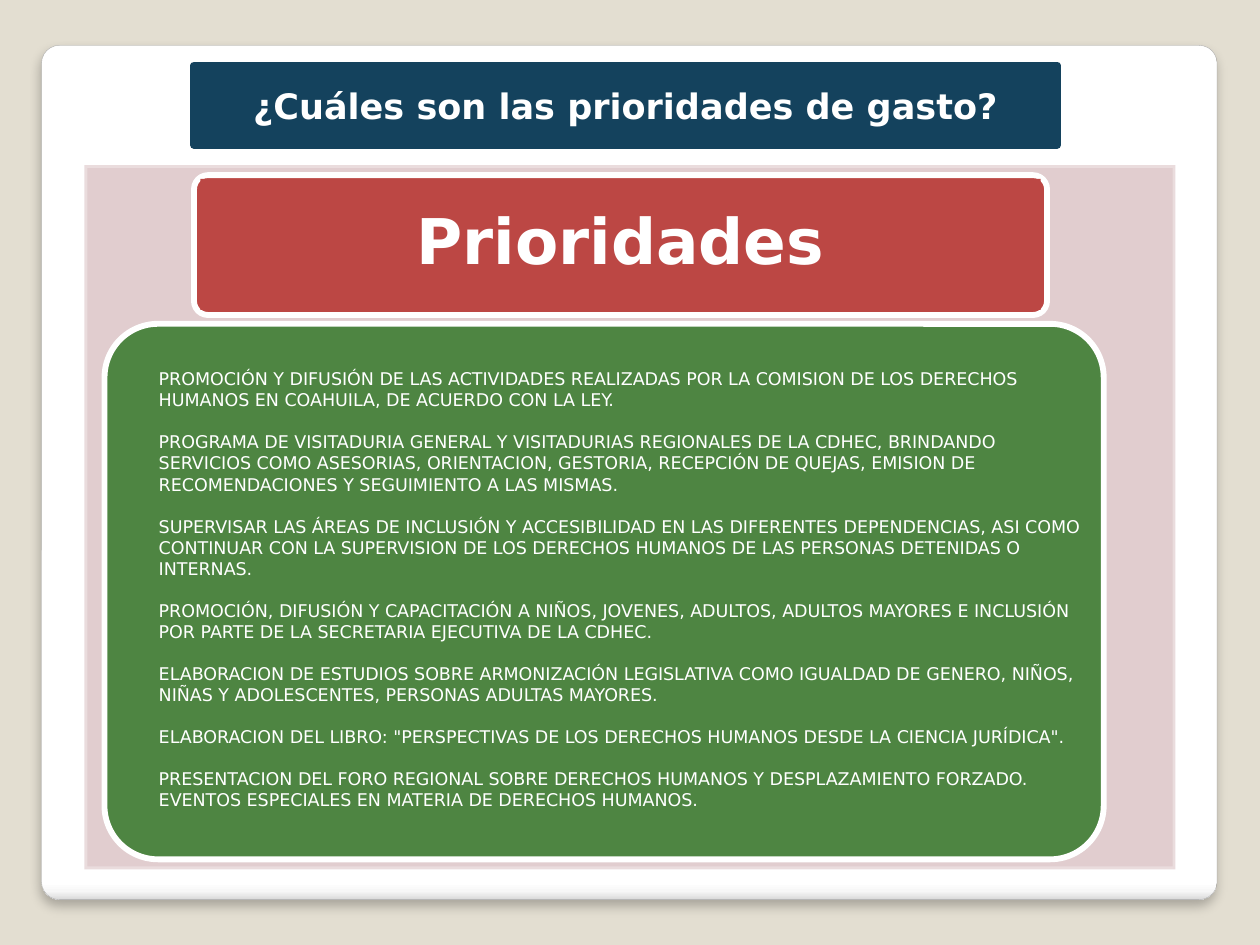
from dataclasses import dataclass

from lxml import etree
from pptx import Presentation
from pptx import util as u
from pptx.dml.color import RGBColor
from pptx.enum import shapes, text
from pptx.oxml.ns import qn


@dataclass(frozen=True)
class Theme:
    font: str = "DejaVu Sans"
    backdrop: str = "E3DED1"
    white: str = "FFFFFF"
    navy: str = "14425D"
    red: str = "BC4744"
    green: str = "4E8542"
    wine: str = "771F28"
    card_edge: str = "A4A4A4"
    card_stops: tuple = ((0, "FFFFFF"), (98, "FFFFFF"), (99, "F7F7F7"), (100, "DADADA"))
    outline: float = 3.35
    title_size: int = 20
    heading_size: int = 36
    body_size: int = 10
    item_gap: int = 12


ROUND = shapes.MSO_SHAPE.ROUNDED_RECTANGLE
RECT = shapes.MSO_SHAPE.RECTANGLE

TITLE = "¿Cuáles son las prioridades de gasto?"
HEADING = "Prioridades"
PRIORITIES = [
    "PROMOCIÓN Y DIFUSIÓN DE LAS ACTIVIDADES REALIZADAS POR LA COMISION DE LOS "
    "DERECHOS HUMANOS EN COAHUILA, DE ACUERDO CON LA LEY.",
    "PROGRAMA DE VISITADURIA GENERAL Y VISITADURIAS REGIONALES DE LA CDHEC, BRINDANDO "
    "SERVICIOS COMO ASESORIAS, ORIENTACION, GESTORIA, RECEPCIÓN DE QUEJAS, EMISION DE "
    "RECOMENDACIONES Y SEGUIMIENTO A LAS MISMAS.",
    "SUPERVISAR LAS ÁREAS DE INCLUSIÓN Y ACCESIBILIDAD EN LAS DIFERENTES DEPENDENCIAS, "
    "ASI COMO CONTINUAR CON LA SUPERVISION DE LOS DERECHOS HUMANOS DE LAS PERSONAS "
    "DETENIDAS O INTERNAS.",
    "PROMOCIÓN, DIFUSIÓN Y CAPACITACIÓN A NIÑOS, JOVENES, ADULTOS, ADULTOS MAYORES E "
    "INCLUSIÓN POR PARTE DE LA SECRETARIA EJECUTIVA DE LA CDHEC.",
    "ELABORACION DE ESTUDIOS SOBRE ARMONIZACIÓN LEGISLATIVA COMO IGUALDAD DE GENERO, "
    "NIÑOS, NIÑAS Y ADOLESCENTES, PERSONAS ADULTAS MAYORES.",
    'ELABORACION DEL LIBRO: "PERSPECTIVAS DE LOS DERECHOS HUMANOS DESDE LA CIENCIA JURÍDICA".',
    "PRESENTACION DEL FORO REGIONAL SOBRE DERECHOS HUMANOS Y DESPLAZAMIENTO FORZADO.",
    "EVENTOS ESPECIALES EN MATERIA DE DERECHOS HUMANOS.",
]


def apply(target, **values):
    for name, value in values.items():
        setattr(target, name, value)


def add_child(parent, tag, **attributes):
    return etree.SubElement(parent, qn(tag), {k: str(v) for k, v in attributes.items()})


class SlideBuilder:
    def __init__(self, slide, theme):
        self.slide, self.theme = slide, theme
        slide.background.fill.solid()
        slide.background.fill.fore_color.rgb = RGBColor.from_string(theme.backdrop)

    def paint(self, shape, fill=None, line=None, width=0, fill_alpha=None, line_alpha=None):
        """Set fill and line; the alphas are percentages of opacity."""
        for part, tag, color, alpha in ((shape.fill, "a:solidFill", fill, fill_alpha),
                                        (shape.line.fill, "a:ln", line, line_alpha)):
            if color is None:
                part.background()
                continue
            part.solid()
            part.fore_color.rgb = RGBColor.from_string(color)
            if alpha is not None:
                holder = shape._element.spPr.find(qn(tag))
                add_child(next(holder.iter(qn("a:srgbClr"))), "a:alpha", val=alpha * 1000)
        if line:
            shape.line.width = u.Pt(width)

    def panel(self, kind, at, corner=None, **style):
        shape = self.slide.shapes.add_shape(kind, *map(u.Inches, at))
        shape.shadow.inherit = False
        if corner is not None:
            shape.adjustments[0] = corner
        self.paint(shape, **style)
        return shape

    def card(self, at, corner):
        """White card with a shaded lower edge and a soft shadow below."""
        theme = self.theme
        shape = self.panel(ROUND, at, corner, fill=theme.white,
                           line=theme.card_edge, width=0.16)
        properties = shape._element.spPr
        gradient = etree.Element(qn("a:gradFill"), rotWithShape="1")
        stops = add_child(gradient, "a:gsLst")
        for position, color in theme.card_stops:
            add_child(add_child(stops, "a:gs", pos=position * 1000), "a:srgbClr", val=color)
        add_child(gradient, "a:lin", ang=90 * 60000, scaled=0)
        properties.replace(properties.find(qn("a:solidFill")), gradient)
        shadow = add_child(properties.find(qn("a:effectLst")), "a:outerShdw",
                           blurRad=u.Pt(6), dist=u.Pt(4), dir=90 * 60000,
                           algn="t", rotWithShape=0)
        add_child(add_child(shadow, "a:srgbClr", val="000000"), "a:alpha", val=25000)

    def set_text(self, shape, lines, size, bold=False, align=text.PP_ALIGN.CENTER,
                 margins=(0.1, 0.05, 0.1, 0.05), **spacing):
        frame = shape.text_frame
        sides = ("margin_left", "margin_top", "margin_right", "margin_bottom")
        apply(frame, word_wrap=True, auto_size=text.MSO_AUTO_SIZE.NONE,
              vertical_anchor=text.MSO_ANCHOR.MIDDLE,
              **dict(zip(sides, map(u.Inches, margins))))
        for index, line in enumerate(lines):
            para = frame.add_paragraph() if index else frame.paragraphs[0]
            apply(para, alignment=align, space_before=u.Pt(0), **spacing)
            span = para.add_run()
            span.text = line
            apply(span.font, name=self.theme.font, size=u.Pt(size), bold=bold)
            span.font.color.rgb = RGBColor.from_string(self.theme.white)
        return frame

    def placeholder(self, index, at):
        """Move a template placeholder into position and in front of the panels."""
        shape = self.slide.placeholders[index]
        apply(shape, **dict(zip(("left", "top", "width", "height"), map(u.Inches, at))))
        self.slide.shapes._spTree.append(shape._element)
        return shape

    def title(self, line, at):
        shape = self.placeholder(0, at)
        self.paint(shape, fill=self.theme.navy, line=self.theme.navy, width=4.5)
        self.set_text(shape, [line], self.theme.title_size, bold=True)

    def priority_list(self, items, at, margins):
        theme = self.theme
        frame = self.set_text(self.placeholder(1, at), items, theme.body_size,
                              align=text.PP_ALIGN.LEFT, margins=margins,
                              space_after=u.Pt(theme.item_gap))
        for para in frame.paragraphs:
            properties = para._p.get_or_add_pPr()
            properties.set("marL", "0")
            properties.set("indent", "0")
            add_child(properties, "a:buNone")
        for para in frame.paragraphs[-2:]:
            para.space_after = u.Pt(0)


def main():
    deck = Presentation()
    apply(deck, slide_width=u.Inches(10), slide_height=u.Inches(7.5))
    theme = Theme()
    page = SlideBuilder(deck.slides.add_slide(deck.slide_layouts[1]), theme)
    outline = dict(line=theme.white, width=theme.outline)

    page.card((0.33, 0.36, 9.33, 6.78), 0.021)
    page.panel(RECT, (0.67, 1.31, 8.66, 5.59), fill=theme.wine, fill_alpha=22,
               line_alpha=30, **outline)
    page.title(TITLE, (1.54, 0.52, 6.85, 0.63))
    page.panel(ROUND, (1.54, 1.39, 6.77, 1.11), 0.1, fill=theme.red, **outline)
    heading = page.panel(RECT, (1.59, 1.42, 6.67, 1.04), fill=theme.red)
    page.set_text(heading, [HEADING], theme.heading_size, bold=True,
                  margins=(0.27,) * 4, line_spacing=0.9)
    page.panel(ROUND, (0.83, 2.57, 7.93, 4.25), 0.1, fill=theme.green, **outline)
    page.priority_list(PRIORITIES, (1.06, 2.69, 7.72, 4.13), (0.2, 0.2, 0.2, 0.36))
    deck.save("out.pptx")


if __name__ == "__main__":
    main()
